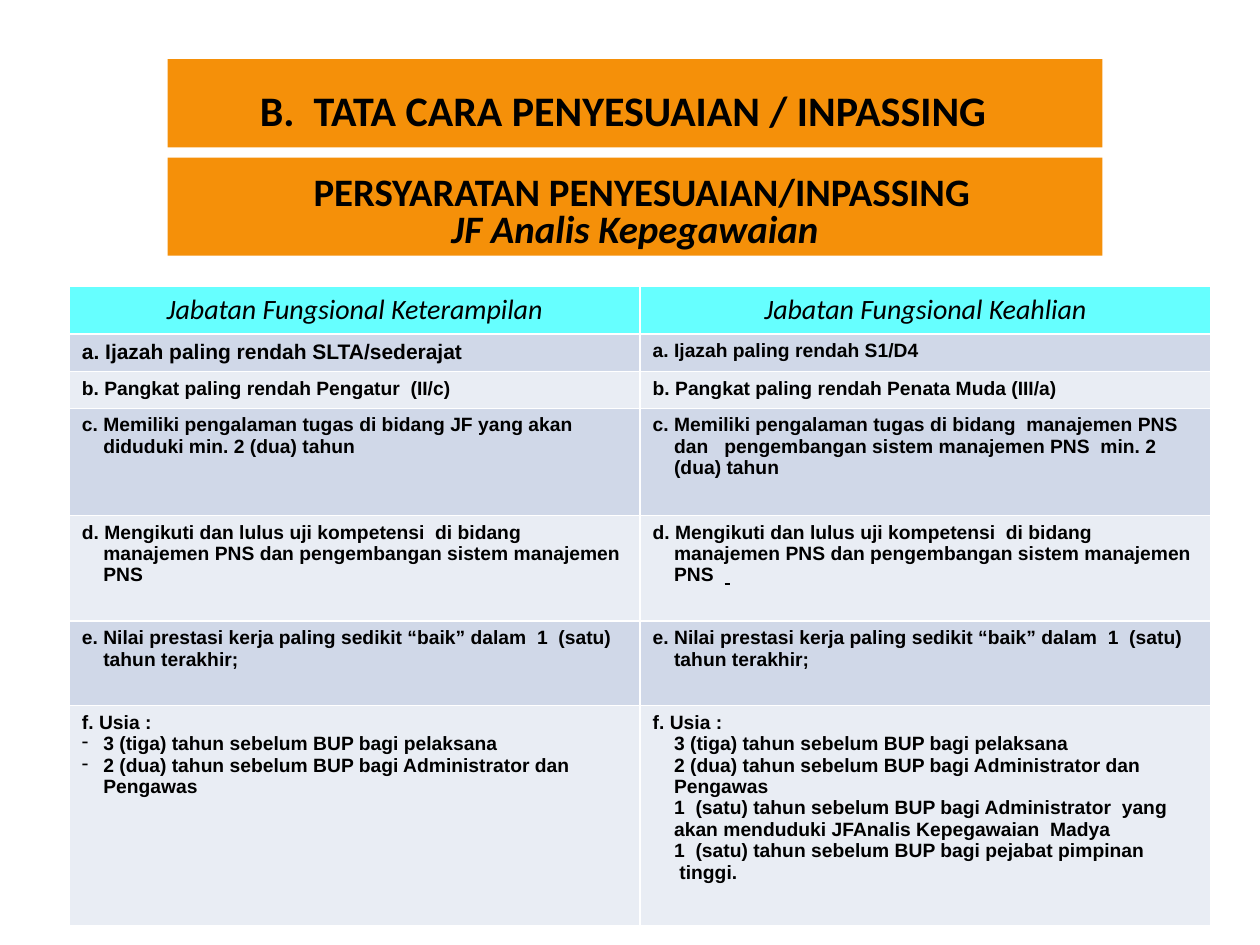
import pptx
import pptx.util
import pptx.dml.color
import pptx.enum.shapes
import pptx.enum.text
import pptx.oxml.ns
import lxml.etree

Inches = pptx.util.Inches
Pt = pptx.util.Pt
Align = pptx.enum.text.PP_ALIGN
Anchor = pptx.enum.text.MSO_ANCHOR
qn = pptx.oxml.ns.qn

HUES = {
    "band": "F59009", "head": "66FFFF", "dark": "D0D8E8",
    "pale": "E9EDF4", "text": "000000", "line": "FFFFFF",
}
HEIGHTS = [0.38, 0.30, 0.29, 0.85, 0.84, 0.67, 1.75]
HEADS = ["Jabatan Fungsional Keterampilan", "Jabatan Fungsional Keahlian"]
INDENT = 0.17

# Lines that start with ">" are indented, those with "-" are bulleted
TEST = ["d. Mengikuti dan lulus uji kompetensi  di bidang",
        ">manajemen PNS dan pengembangan sistem manajemen"]
GRADE = ["e. Nilai prestasi kerja paling sedikit “baik” dalam  1  (satu)",
         ">tahun terakhir;"]
ROWS = [
    (["a. Ijazah paling rendah SLTA/sederajat"],
     ["a. Ijazah paling rendah S1/D4"]),
    (["b. Pangkat paling rendah Pengatur  (II/c)"],
     ["b. Pangkat paling rendah Penata Muda (III/a)"]),
    (["c. Memiliki pengalaman tugas di bidang JF yang akan",
      ">diduduki min. 2 (dua) tahun"],
     ["c. Memiliki pengalaman tugas di bidang  manajemen PNS",
      ">dan   pengembangan sistem manajemen PNS  min. 2",
      ">(dua) tahun"]),
    (TEST + [">PNS"], TEST + [">PNS  "]),
    (GRADE, GRADE),
    (["f. Usia :",
      "-3 (tiga) tahun sebelum BUP bagi pelaksana",
      "-2 (dua) tahun sebelum BUP bagi Administrator dan",
      ">Pengawas"],
     ["f. Usia :",
      ">3 (tiga) tahun sebelum BUP bagi pelaksana",
      ">2 (dua) tahun sebelum BUP bagi Administrator dan",
      ">Pengawas",
      ">1  (satu) tahun sebelum BUP bagi Administrator  yang",
      ">akan menduduki JFAnalis Kepegawaian  Madya",
      ">1  (satu) tahun sebelum BUP bagi pejabat pimpinan",
      "> tinggi."]),
]


def color(name):
    return pptx.dml.color.RGBColor.from_string(HUES[name])


def add_run(para, text, size, face="Calibri", bold=True, slant=False):
    run = para.add_run()
    run.text = text
    font = run.font
    font.name, font.size = face, Pt(size)
    font.bold, font.italic = bold, slant
    font.color.rgb = color("text")
    return run


def add_band(slide, top, high):
    kind = pptx.enum.shapes.MSO_SHAPE.RECTANGLE
    band = slide.shapes.add_shape(
        kind, Inches(1.33), Inches(top), Inches(7.42), Inches(high))
    band.shadow.inherit = False
    band.fill.solid()
    band.fill.fore_color.rgb = color("band")
    band.line.fill.background()
    return band


def add_title(slide):
    box = slide.shapes.add_textbox(
        Inches(0.67), Inches(0.62), Inches(8.55), Inches(0.5))
    box.text_frame.word_wrap = True
    para = box.text_frame.paragraphs[0]
    para.alignment = Align.CENTER
    add_run(para, "B.  TATA CARA PENYESUAIAN / INPASSING", 24)


def fill_band(band):
    frame = band.text_frame
    frame.word_wrap = True
    frame.vertical_anchor = Anchor.BOTTOM
    first, last = frame.paragraphs[0], frame.add_paragraph()
    for para in (first, last):
        para.alignment = Align.CENTER
        para.line_spacing = 0.7
    add_run(first, " ", 35.1)
    add_run(first, "PERSYARATAN PENYESUAIAN/INPASSING", 22.2)
    add_run(last, " JF Analis Kepegawaian ", 22.2, slant=True)


def style_cell(cell, fill):
    props = cell._tc.get_or_add_tcPr()
    for side in ("lnL", "lnR", "lnT", "lnB"):
        line = lxml.etree.SubElement(props, qn("a:" + side), w=str(Pt(1)))
        solid = lxml.etree.SubElement(line, qn("a:solidFill"))
        lxml.etree.SubElement(solid, qn("a:srgbClr"), val=HUES["line"])
    cell.fill.solid()
    cell.fill.fore_color.rgb = color(fill)


def indent(para, mark):
    props = para._p.get_or_add_pPr()
    props.set("marL", str(Inches(INDENT)))
    if mark == "-":
        props.set("indent", str(-Inches(INDENT)))
        lxml.etree.SubElement(props, qn("a:buChar"), char="-")
    else:
        props.set("indent", "0")


def fill_cell(cell, lines, size):
    frame = cell.text_frame
    for i, line in enumerate(lines):
        para = frame.add_paragraph() if i else frame.paragraphs[0]
        if line[0] in ">-":
            indent(para, line[0])
            line = line[1:]
        add_run(para, line, size, "Arial")


def add_grid(slide):
    table = slide.shapes.add_table(
        len(HEIGHTS), 2, Inches(0.55), Inches(2.27),
        Inches(9.06), Inches(sum(HEIGHTS))).table
    table.first_row = table.horz_banding = False
    for row, high in zip(table.rows, HEIGHTS):
        row.height = Inches(high)

    # Header row
    for col, head in enumerate(HEADS):
        cell = table.cell(0, col)
        style_cell(cell, "head")
        para = cell.text_frame.paragraphs[0]
        para.alignment = Align.CENTER
        add_run(para, head, 16, bold=False, slant=True)

    # Requirement rows, in alternating shades
    for r, pair in enumerate(ROWS, 1):
        for col, lines in enumerate(pair):
            cell = table.cell(r, col)
            style_cell(cell, "dark" if r % 2 else "pale")
            fill_cell(cell, lines, 12 if (r, col) == (1, 0) else 11)

    # Underlined space that ends the right-hand test rule
    para = table.cell(4, 1).text_frame.paragraphs[-1]
    add_run(para, " ", 11, "Arial").font.underline = True


def main():
    deck = pptx.Presentation()
    deck.slide_width, deck.slide_height = Inches(10), Inches(7.5)
    slide = deck.slides.add_slide(deck.slide_layouts[6])

    # Title bands
    add_band(slide, 0.47, 0.7)
    add_title(slide)
    fill_band(add_band(slide, 1.25, 0.78))

    # Requirements table
    add_grid(slide)
    deck.save("out.pptx")


if __name__ == "__main__":
    main()
